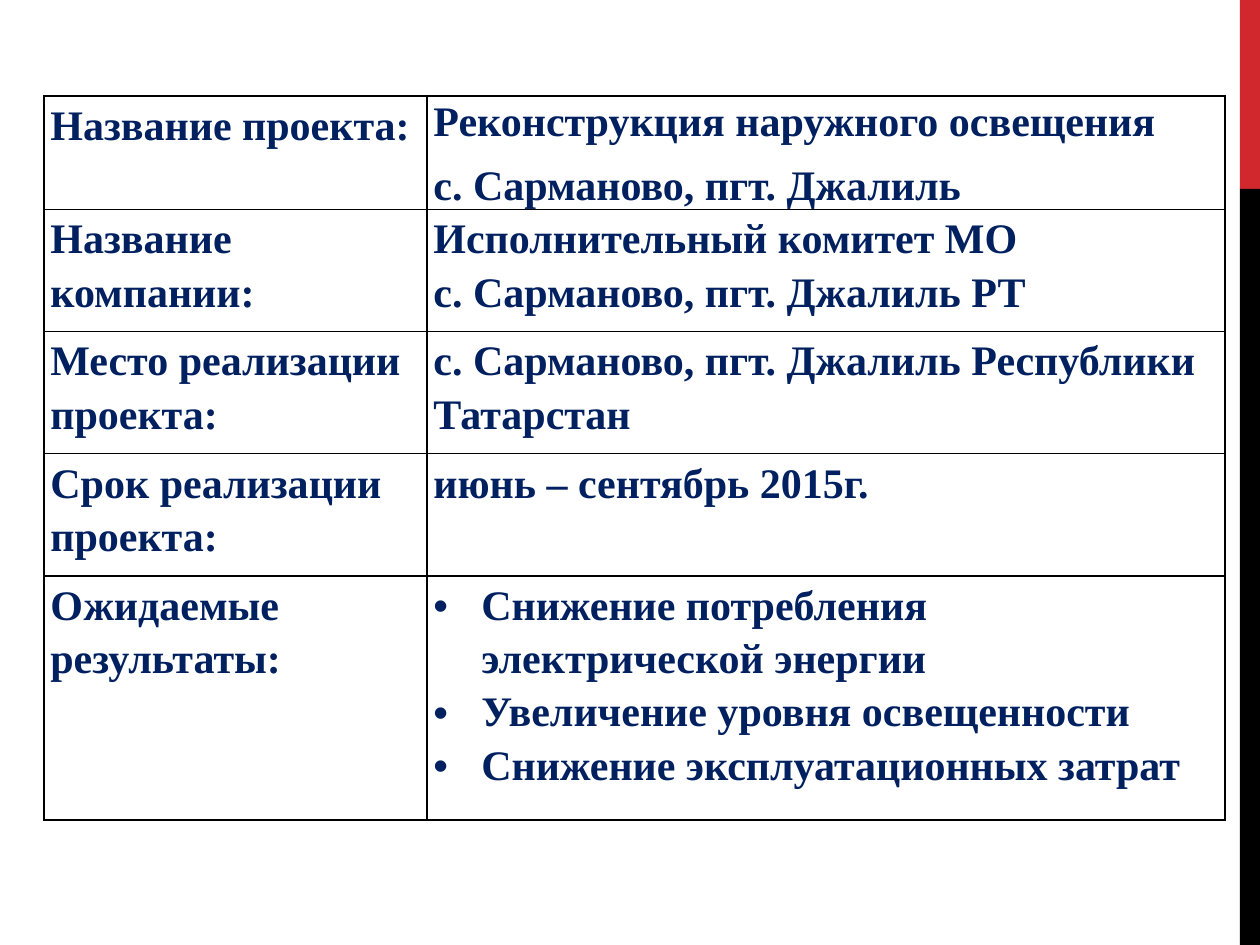
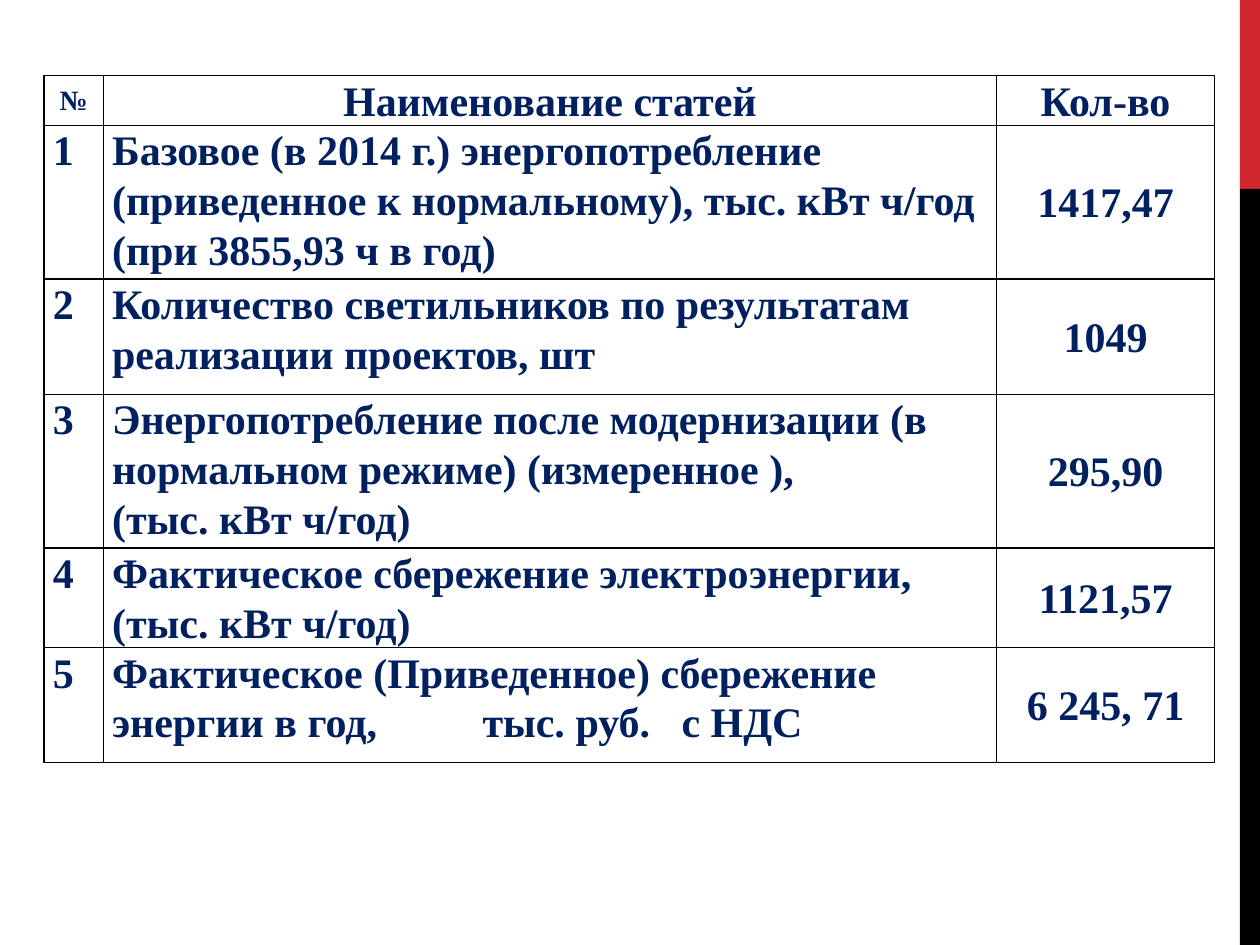
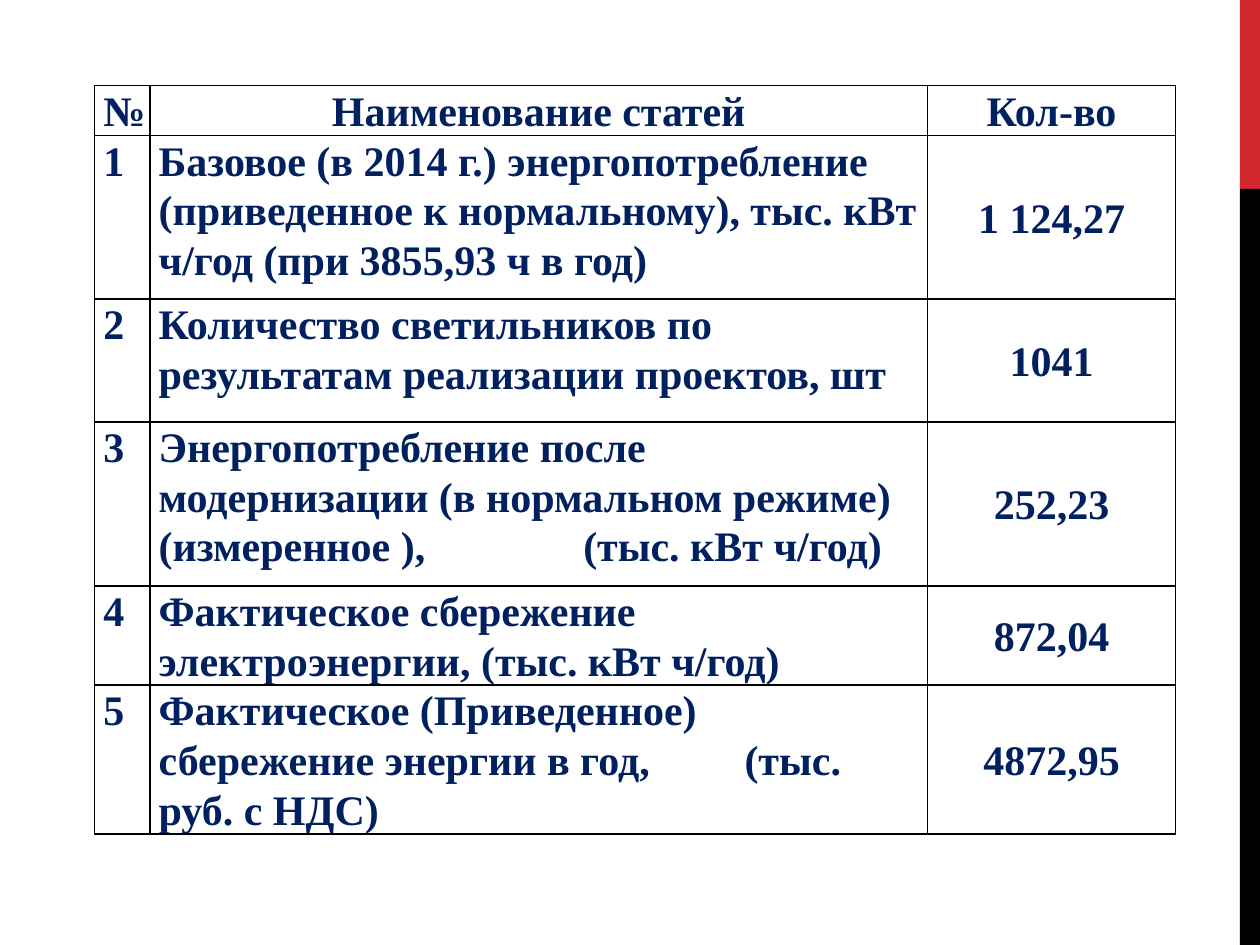
from dataclasses import dataclass

from lxml import etree
from pptx import Presentation
from pptx.dml.color import RGBColor
from pptx.enum.shapes import MSO_SHAPE
from pptx.enum.text import MSO_ANCHOR, PP_ALIGN
from pptx.oxml.ns import qn
from pptx.util import Inches, Pt

RECTANGLE = MSO_SHAPE.RECTANGLE
TOP, MIDDLE = MSO_ANCHOR.TOP, MSO_ANCHOR.MIDDLE
LEFT, CENTER, JUSTIFY = PP_ALIGN.LEFT, PP_ALIGN.CENTER, PP_ALIGN.JUSTIFY
SLIDE_W, SLIDE_H = Inches(10), Inches(7.5)


@dataclass(frozen=True)
class Theme:
    font: str = "Times New Roman"
    text: str = "002060"
    paper: str = "FFFFFF"
    accent: str = "D1282E"
    black: str = "000000"
    body: int = 24
    small: int = 16
    thin: float = 1
    thick: float = 1.5


@dataclass(frozen=True)
class Box:
    left: float
    top: float
    width: float
    height: float

    def emu(self):
        return (int(SLIDE_W * self.left / 100), int(SLIDE_H * self.top / 100),
                int(SLIDE_W * self.width / 100), int(SLIDE_H * self.height / 100))


@dataclass(frozen=True)
class Line:
    text: str
    align: PP_ALIGN = LEFT
    spacing: float = 1.07
    after: float = 8
    size: int = Theme.body
    bullet: bool = False
    tabs: tuple = ()


THEME = Theme()
SIDE_BAND = Box(98.4, 0, 1.6, 100)
ACCENT_SHARE = 0.2

PROJECT = [
    ("Название проекта:", ["Реконструкция наружного освещения", "с. Сарманово, пгт. Джалиль"]),
    ("Название компании:", ["Исполнительный комитет МО\vс. Сарманово, пгт. Джалиль РТ"]),
    ("Место реализации проекта:", ["с. Сарманово, пгт. Джалиль Республики Татарстан"]),
    ("Срок реализации проекта:", ["июнь – сентябрь 2015г."]),
    ("Ожидаемые результаты:", ["Снижение потребления электрической энергии",
                               "Увеличение уровня освещенности",
                               "Снижение эксплуатационных затрат"]),
]
HEADINGS = ("№", "Наименование статей", "Кол-во")
BASELINE = ("Базовое (в 2014 г.) энергопотребление (приведенное к нормальному), "
            "тыс. кВт ч/год (при 3855,93 ч в год)")
LAMPS = "Количество светильников по результатам реализации проектов, шт"
AFTER = "Энергопотребление после модернизации (в нормальном режиме) (измеренное ),"
SAVED = "Фактическое сбережение электроэнергии, (тыс. кВт ч/год)"
SAVED_MONEY = "Фактическое (Приведенное) сбережение энергии в год,"
ITEM_ROWS = (4, 3, 4, 2, 3)

FIRST_ITEMS = [
    (Line(BASELINE), "1417,47"),
    (Line(LAMPS), "1049"),
    (Line(AFTER + "\v(тыс. кВт ч/год)"), "295,90"),
    (Line(SAVED), "1121,57"),
    (Line(SAVED_MONEY + "\tтыс. руб.\tс НДС", tabs=(2.94, 4.52)), "6 245, 71"),
]
SECOND_ITEMS = [
    (Line(BASELINE), "1 124,27"),
    (Line(LAMPS), "1041"),
    (Line(AFTER + "\t(тыс. кВт ч/год)", tabs=(3.37,)), "252,23"),
    (Line(SAVED), "872,04"),
    (Line(SAVED_MONEY + "\t(тыс. руб. с НДС)", tabs=(4.65,)), "4872,95"),
]


def add_rect(slide, place, color):
    rect = slide.shapes.add_shape(RECTANGLE, *place)
    rect.shadow.inherit = False
    rect.fill.solid()
    rect.fill.fore_color.rgb = RGBColor.from_string(color)
    rect.line.fill.background()


def draw_side_band(slide, box):
    left, top, width, height = box.emu()
    accent = int(height * ACCENT_SHARE)
    add_rect(slide, (left, top, width, accent), THEME.accent)
    add_rect(slide, (left, top + accent, width, height - accent), THEME.black)


def write_line(paragraph, line):
    paragraph.text = line.text
    paragraph.alignment = line.align
    paragraph.line_spacing = line.spacing
    paragraph.space_after = Pt(line.after)
    props = paragraph._p.get_or_add_pPr()
    if line.bullet:
        indent = Inches(0.38)
        props.set("marL", str(indent))
        props.set("indent", str(-indent))
        etree.SubElement(props, qn("a:buFont"), typeface="Arial")
        etree.SubElement(props, qn("a:buChar"), char="•")
    if line.tabs:
        stops = etree.SubElement(props, qn("a:tabLst"))
        for position in line.tabs:
            etree.SubElement(stops, qn("a:tab"), pos=str(Inches(position)), algn="l")
    font = paragraph.font
    font.name, font.size, font.bold = THEME.font, Pt(line.size), True
    font.color.rgb = RGBColor.from_string(THEME.text)


def set_borders(cell, widths):
    props = cell._tc.get_or_add_tcPr()
    for side, width in zip("LRTB", widths):
        border = etree.SubElement(props, qn(f"a:ln{side}"), w=str(Pt(width)))
        fill = etree.SubElement(border, qn("a:solidFill"))
        etree.SubElement(fill, qn("a:srgbClr"), val=THEME.black)


def fill_cell(cell, lines, anchor, inset, borders):
    cell.margin_left = cell.margin_right = Inches(inset)
    cell.margin_top = cell.margin_bottom = 0
    cell.vertical_anchor = anchor
    set_borders(cell, borders)
    cell.fill.solid()
    cell.fill.fore_color.rgb = RGBColor.from_string(THEME.paper)
    frame = cell.text_frame
    for index, line in enumerate(lines):
        write_line(frame.add_paragraph() if index else frame.paragraphs[0], line)


def add_grid(slide, box, columns, rows):
    place = box.emu()
    table = slide.shapes.add_table(len(rows), len(columns), *place).table
    table.first_row = table.horz_banding = False
    for column, share in zip(table.columns, columns):
        column.width = int(place[2] * share / sum(columns))
    for row, share in zip(table.rows, rows):
        row.height = int(place[3] * share / sum(rows))
    return table


def draw_project(slide, box):
    table = add_grid(slide, box, (3.04, 6.33), (0.93, 1, 1, 1, 2))
    last = len(PROJECT) - 1
    for row, (label, details) in enumerate(PROJECT):
        borders = (THEME.thick, THEME.thick,
                   THEME.thin if row else THEME.thick,
                   THEME.thick if row == last else THEME.thin)
        loose = {"spacing": 1.15, "after": 0}
        style = loose if row else {}
        values = [Line(text, JUSTIFY if row == last and index else LEFT,
                       bullet=row == last, **style)
                  for index, text in enumerate(details)]
        for column, lines in enumerate(([Line(label, **loose)], values)):
            fill_cell(table.cell(row, column), lines, TOP, 0.05, borders)


def draw_items(slide, box, columns, header_row, items, number_size=THEME.body):
    table = add_grid(slide, box, columns, (header_row, *ITEM_ROWS))
    sizes = (number_size, THEME.body, THEME.body)
    content = [[Line(text, CENTER, size=size) for text, size in zip(HEADINGS, sizes)]]
    content += [[Line(str(number)), item, Line(amount, CENTER)]
                for number, (item, amount) in enumerate(items, 1)]
    for row, lines in enumerate(content):
        for column, line in enumerate(lines):
            anchor = MIDDLE if line.align == CENTER else TOP
            fill_cell(table.cell(row, column), [line], anchor, 0.07, [THEME.thin] * 4)


def add_page(deck):
    slide = deck.slides.add_slide(deck.slide_layouts[6])
    draw_side_band(slide, SIDE_BAND)
    return slide


def main():
    deck = Presentation()
    deck.slide_width, deck.slide_height = SLIDE_W, SLIDE_H
    draw_project(add_page(deck), Box(3.5, 10.13, 93.7, 76.67))
    draw_items(add_page(deck), Box(3.5, 8, 92.9, 68.13),
               (0.47, 7.09, 1.73), 0.75, FIRST_ITEMS, THEME.small)
    draw_items(add_page(deck), Box(7.5, 9.07, 85.8, 73.67),
               (0.44, 6.18, 1.97), 1, SECOND_ITEMS)
    deck.save("out.pptx")


if __name__ == "__main__":
    main()
